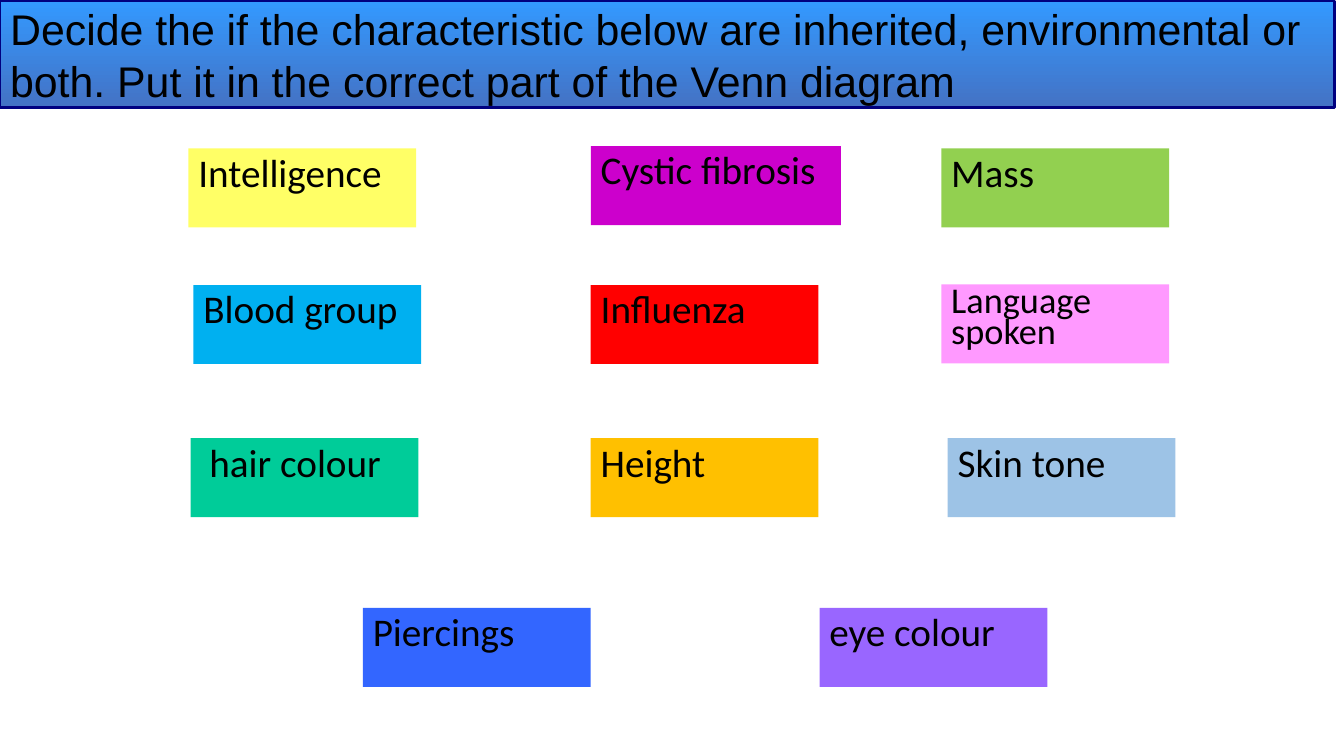
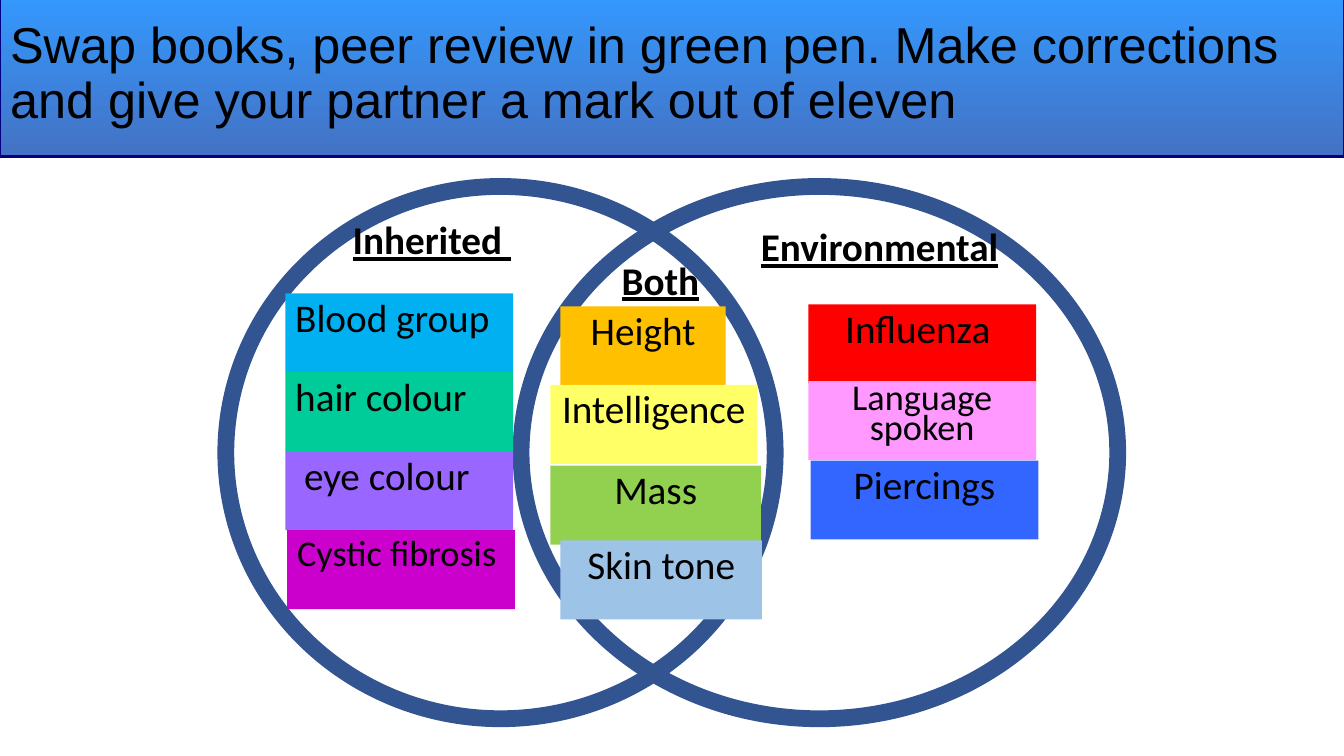
from dataclasses import dataclass

from lxml import etree
from pptx import Presentation
from pptx.dml.color import RGBColor
from pptx.enum.shapes import MSO_SHAPE
from pptx.enum.text import MSO_ANCHOR, MSO_AUTO_SIZE, PP_ALIGN
from pptx.oxml.ns import qn
from pptx.util import Pt

RECT, OVAL = MSO_SHAPE.RECTANGLE, MSO_SHAPE.OVAL
TOP, MIDDLE = MSO_ANCHOR.TOP, MSO_ANCHOR.MIDDLE
LEFT, CENTER = PP_ALIGN.LEFT, PP_ALIGN.CENTER
NO_FIT, GROW = MSO_AUTO_SIZE.NONE, MSO_AUTO_SIZE.SHAPE_TO_FIT_TEXT


@dataclass(frozen=True)
class Theme:
    title_font: str = "Arial"
    body_font: str = "Calibri"
    body_size: float = 28
    small_size: float = 25.9
    text: str = "000000"
    band_top: str = "3399FF"
    band_bottom: str = "4472C4"
    band_line: str = "000080"
    ring: str = "325491"


theme = Theme()

CARD_W, CARD_H = 162.7, 56.4
CARD_COLOURS = {
    "Blood group": "00B0F0",
    "Intelligence": "FFFF66",
    "Language spoken": "FF99FF",
    "eye colour": "9966FF",
    "Height": "FFC000",
    "Mass": "92D050",
    "hair colour": "00CC99",
    "Influenza": "FF0000",
    "Cystic fibrosis": "CC00CC",
    "Skin tone": "9DC3E6",
    "Piercings": "3366FF",
}


def add_title(slide, text, top, width, height, size, spacing):
    sp = slide.shapes.title
    sp.left, sp.top, sp.width, sp.height = Pt(0), Pt(top), Pt(width), Pt(height)
    geom = etree.SubElement(sp.element.spPr, qn("a:prstGeom"), prst="roundRect")
    guides = etree.SubElement(geom, qn("a:avLst"))
    etree.SubElement(guides, qn("a:gd"), name="adj", fmla="val 6900")
    sp.fill.gradient()
    sp.fill.gradient_angle = 270
    for stop, colour in zip(sp.fill.gradient_stops, (theme.band_top, theme.band_bottom)):
        stop.color.rgb = RGBColor.from_string(colour)
    sp.line.color.rgb = RGBColor.from_string(theme.band_line)
    sp.line.width = Pt(2)
    tf = sp.text_frame
    tf.text = text
    tf.word_wrap = True
    tf.auto_size = NO_FIT
    tf.vertical_anchor = MIDDLE
    p = tf.paragraphs[0]
    p.alignment = LEFT
    p.line_spacing = spacing
    p.font.name = theme.title_font
    p.font.size = Pt(size)
    p.font.color.rgb = RGBColor.from_string(theme.text)


def add_card(slide, text, left, top, width=CARD_W, align=LEFT, size=theme.body_size):
    name = text.strip()
    tight = name == "Language spoken"
    sp = slide.shapes.add_shape(RECT, Pt(left), Pt(top), Pt(width), Pt(CARD_H))
    sp.shadow.inherit = False
    sp.fill.solid()
    sp.fill.fore_color.rgb = RGBColor.from_string(CARD_COLOURS[name])
    sp.line.fill.background()
    tf = sp.text_frame
    tf.text = text
    tf.word_wrap = True
    tf.vertical_anchor = TOP
    p = tf.paragraphs[0]
    p.alignment = align
    p.line_spacing = 0.7 if tight else 0.9
    p.font.name = theme.body_font
    p.font.size = Pt(theme.small_size if tight else size)
    p.font.color.rgb = RGBColor.from_string(theme.text)


prs = Presentation()
prs.slide_width, prs.slide_height = Pt(960), Pt(540)
title_only = prs.slide_layouts[5]

s = prs.slides.add_slide(title_only)
add_title(
    s,
    "Decide the if the characteristic below are inherited, environmental or both. "
    "Put it in the correct part of the Venn diagram",
    0.7, 953.3, 76.3, 30.6, 1.0,
)
for text, left, top, width in [
    ("Intelligence", 134.6, 106, CARD_W),
    ("Cystic fibrosis", 422, 104.4, 178.6),
    ("Mass", 672.4, 106, CARD_W),
    ("Blood group", 138.2, 203.6, CARD_W),
    ("Influenza", 422, 203.6, CARD_W),
    ("Language spoken", 672.4, 203.2, CARD_W),
    (" hair colour", 136.2, 313, CARD_W),
    ("Height", 422, 313, CARD_W),
    ("Skin tone", 677, 313, CARD_W),
    ("Piercings", 259.2, 434.2, CARD_W),
    ("eye colour", 585.4, 434.2, CARD_W),
]:
    add_card(s, text, left, top, width)

s = prs.slides.add_slide(title_only)
add_title(
    s,
    "Swap books, peer review in green pen. Make corrections and give your partner "
    "a mark out of eleven",
    -5, 960, 116.6, 36, 0.9,
)
for left, width in [(161.3, 392.4), (372.2, 426.2)]:
    sp = s.shapes.add_shape(OVAL, Pt(left), Pt(133.2), Pt(width), Pt(380.2))
    sp.shadow.inherit = False
    sp.fill.background()
    sp.line.color.rgb = RGBColor.from_string(theme.ring)
    sp.line.width = Pt(12)

for text, left, top, width in [
    ("Inherited ", 244.8, 150.5, 154),
    ("Environmental", 536.4, 155.5, 188),
    ("Both", 437, 179.3, 154),
]:
    sp = s.shapes.add_textbox(Pt(left), Pt(top), Pt(width), Pt(41))
    tf = sp.text_frame
    tf.text = text
    tf.word_wrap = True
    tf.auto_size = GROW
    r = tf.paragraphs[0].runs[0]
    r.font.name = theme.body_font
    r.font.size = Pt(theme.body_size)
    r.font.bold = True
    r.font.underline = True
    r.font.color.rgb = RGBColor.from_string(theme.text)

for i, text in enumerate(["Blood group", "hair colour", " eye colour"]):
    add_card(s, text, 203.8, 209.5 + i * CARD_H)
add_card(s, "Cystic fibrosis", 205.2, 378.7, size=theme.small_size)

for text, left, top, width in [
    ("Influenza ", 577.4, 217.5, CARD_W),
    ("Language spoken", 577.4, 272.2, CARD_W),
    ("Piercings", 579, 329, CARD_W),
    ("Height", 400.3, 218.9, 118),
    ("Intelligence ", 393.1, 275, 147.8),
    ("Mass", 393.1, 332.6, 150.5),
    ("Skin tone", 400.3, 386, 144),
]:
    add_card(s, text, left, top, width, CENTER)

prs.save("out.pptx")
